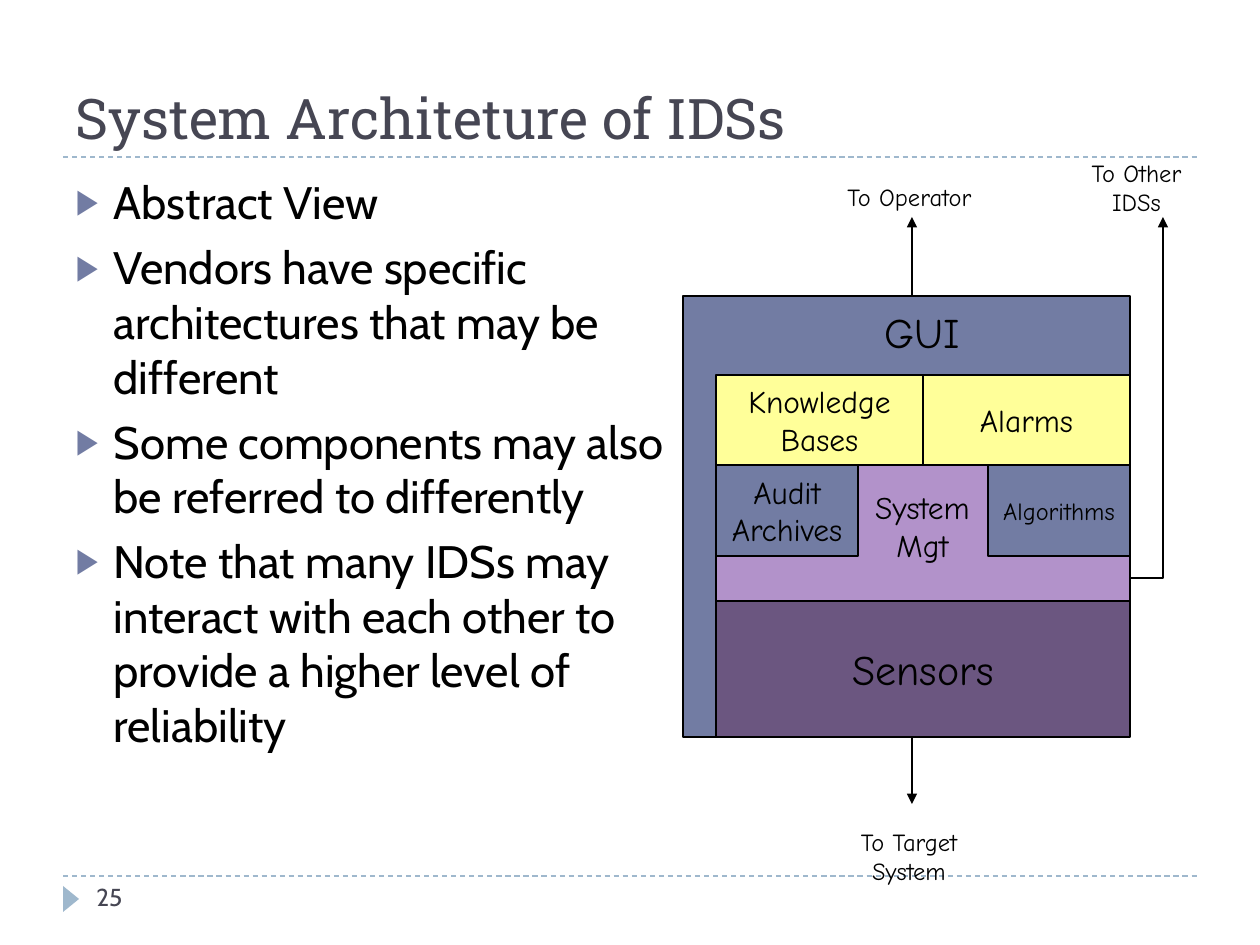
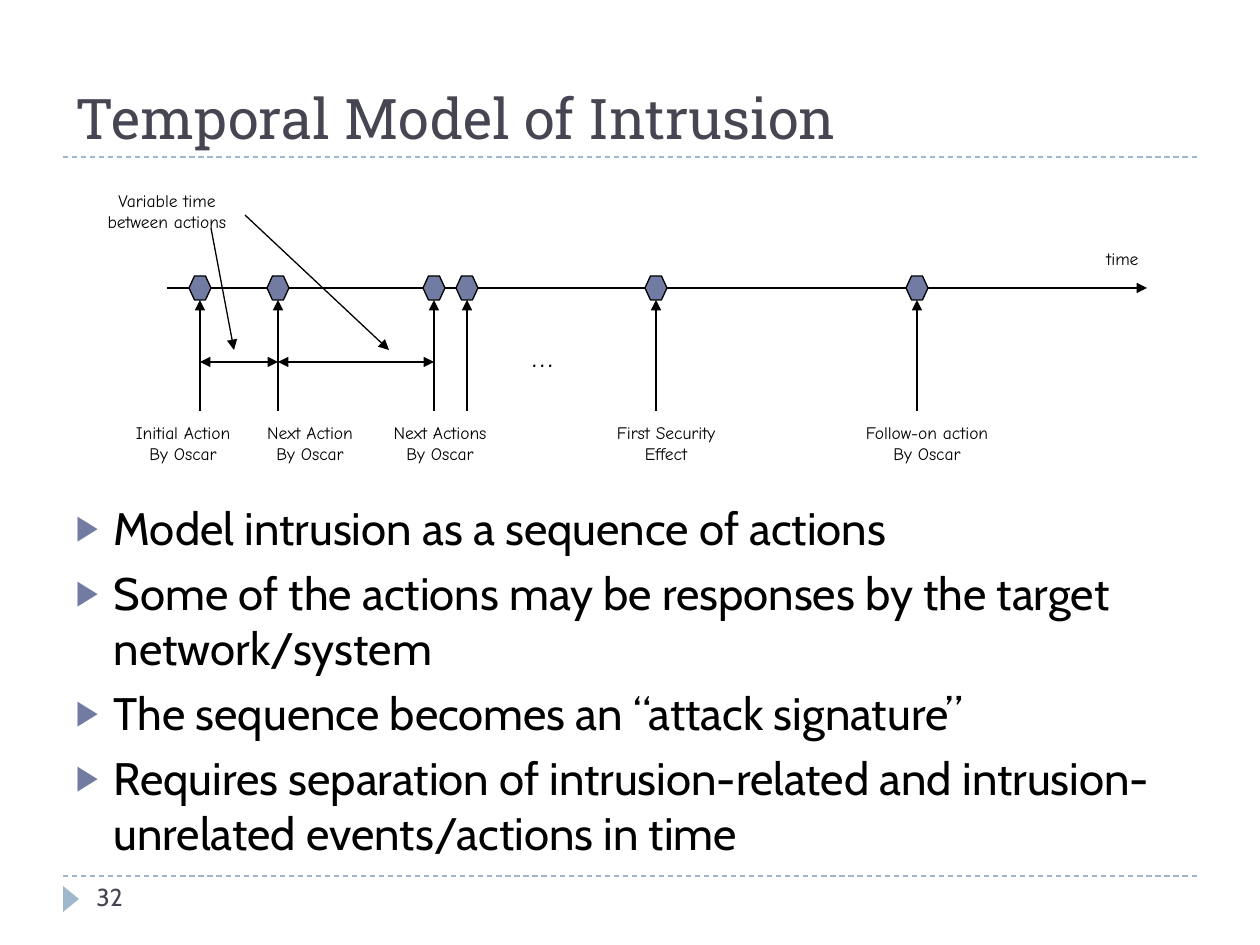
from lxml import etree
from pptx import Presentation
from pptx.dml.color import RGBColor
from pptx.enum.dml import MSO_LINE
from pptx.enum.shapes import MSO_CONNECTOR, MSO_SHAPE
from pptx.enum.text import MSO_ANCHOR, MSO_AUTO_SIZE, PP_ALIGN
from pptx.oxml.ns import qn
from pptx.util import Pt

STRAIGHT = MSO_CONNECTOR.STRAIGHT
RECTANGLE, HEXAGON, TRIANGLE = MSO_SHAPE.RECTANGLE, MSO_SHAPE.HEXAGON, MSO_SHAPE.ISOSCELES_TRIANGLE
TOP, MIDDLE, BOTTOM = MSO_ANCHOR.TOP, MSO_ANCHOR.MIDDLE, MSO_ANCHOR.BOTTOM
LEFT, CENTER = PP_ALIGN.LEFT, PP_ALIGN.CENTER
DASH = MSO_LINE.DASH
NO_FIT = MSO_AUTO_SIZE.NONE

EMU_PER_PX = 914400 / 126
SLIDE_SIZE = (1260, 945)
TITLE_BOX = (63, 21, 1134, 136)
NUMBER_BOX = (84, 876, 273, 50)
MARKER_BOX = (58, 891, 26, 16)
RULE_ENDS, RULE_YS = (63, 1197), (157, 876)
BULLET_INDENT = 38

TITLE_FONT, BODY_FONT, DIAGRAM_FONT = "Roboto Slab", "Cabin", "Comic Neue"
BLACK, SLATE, PALE_BLUE = "000000", "464653", "9FB8CD"
BLUE, YELLOW, LILAC, PLUM = "727CA3", "FFFF99", "B292CA", "6B5680"

ARCHITECTURE = {
    "title": "System Architeture of IDSs",
    "number": "25",
    "body_box": (63, 168, 620, 680),
    "points": [
        "Abstract View",
        "Vendors have specific architectures that may be different",
        "Some components may also be referred to differently",
        "Note that many IDSs may interact with each other to provide a higher level of reliability",
    ],
}
TEMPORAL = {
    "title": "Temporal Model of Intrusion",
    "number": "32",
    "body_box": (63, 494, 1134, 355),
    "points": [
        "Model intrusion as a sequence of actions",
        "Some of the actions may be responses by the target network/system",
        "The sequence becomes an “attack signature”",
        "Requires separation of intrusion-related and intrusion-unrelated events/actions in time",
    ],
}

# Edges of the component stack
FRAME_LEFT, STACK_LEFT, STACK_RIGHT = 683, 716, 1130
STACK_MID = (STACK_LEFT + STACK_RIGHT) // 2
SIDE_WIDTH = 142
MGT_LEFT, MGT_RIGHT = STACK_LEFT + SIDE_WIDTH, STACK_RIGHT - SIDE_WIDTH
GUI_TOP, KNOWLEDGE_TOP, AUDIT_TOP, MGT_BASE_TOP, SENSORS_TOP, STACK_BOTTOM = 296, 375, 465, 556, 601, 737
OPERATOR_X, OTHER_IDS_X, ARROW_TOP = 912, 1163, 217

# lines, size, fill, left, top, right, bottom
COMPONENTS = [
    (["Knowledge", "Bases"], 18, YELLOW, STACK_LEFT, KNOWLEDGE_TOP, STACK_MID, AUDIT_TOP),
    (["Alarms"], 18, YELLOW, STACK_MID, KNOWLEDGE_TOP, STACK_RIGHT, AUDIT_TOP),
    (["Audit", "Archives"], 18, BLUE, STACK_LEFT, AUDIT_TOP, MGT_LEFT, MGT_BASE_TOP),
    (["Algorithms"], 14, BLUE, MGT_RIGHT, AUDIT_TOP, STACK_RIGHT, MGT_BASE_TOP),
    (["Sensors"], 24, PLUM, STACK_LEFT, SENSORS_TOP, STACK_RIGHT, STACK_BOTTOM),
]
MANAGEMENT_OUTLINE = [
    (STACK_LEFT, SENSORS_TOP), (STACK_RIGHT, SENSORS_TOP), (STACK_RIGHT, MGT_BASE_TOP),
    (MGT_RIGHT, MGT_BASE_TOP), (MGT_RIGHT, AUDIT_TOP), (MGT_LEFT, AUDIT_TOP),
    (MGT_LEFT, MGT_BASE_TOP), (STACK_LEFT, MGT_BASE_TOP),
]
GUI_OUTLINE = [
    (FRAME_LEFT, STACK_BOTTOM), (FRAME_LEFT, GUI_TOP), (STACK_RIGHT, GUI_TOP),
    (STACK_RIGHT, KNOWLEDGE_TOP), (STACK_LEFT, KNOWLEDGE_TOP), (STACK_LEFT, STACK_BOTTOM),
]
OTHER_IDS_ROUTE = [(STACK_RIGHT, 578), (OTHER_IDS_X, 578), (OTHER_IDS_X, ARROW_TOP)]
ARCHITECTURE_LABELS = [
    (["System", "Mgt"], 18, (852, 479, 141, 94)),
    (["GUI"], 24, (866, 296, 112, 72)),
    (["To Operator"], 14, (822, 174, 175, 45)),
    (["To Other", "IDSs"], 14, (1070, 151, 133, 72)),
    (["To Target", "System"], 14, (836, 818, 146, 77)),
]

# Timeline
AXIS_Y, AXIS_START, AXIS_END = 288, 167, 1147
MARK_WIDTH, MARK_HEIGHT = 22, 24
POINTER_BOTTOM, INTERVAL_Y = 411, 362
EVENT_XS = [200, 278, 434, 467, 656, 917]
INTERVALS = list(zip(EVENT_XS[:2], EVENT_XS[1:3]))
CALLOUT_ARROWS = [((211, 228), (234, 350)), ((245, 215), (389, 350))]
# lines, centre, width
EVENT_LABELS = [
    (["Initial Action", "By Oscar"], 183, 142),
    (["Next Action", "By Oscar"], 310, 134),
    (["Next Actions", "By Oscar"], 440, 142),
    (["First Security", "Effect"], 666, 150),
    (["Follow-on action", "By Oscar"], 927, 166),
]
TIMELINE_LABELS = [
    (["Variable time", "between actions"], 10, (84, 179, 166, 64)),
    (["…"], 18, (518, 325, 49, 59)),
    (["time"], 10, (1090, 239, 65, 39)),
] + [(lines, 10, (center - width // 2, POINTER_BOTTOM, width, 64))
     for lines, center, width in EVENT_LABELS]


def px(*lengths):
    return [round(length * EMU_PER_PX) for length in lengths]


def color(hex_string):
    return RGBColor.from_string(hex_string)


def write(frame, lines, size, font, text_color=BLACK, align=CENTER, anchor=MIDDLE, wrap=False):
    frame.word_wrap = wrap
    frame.auto_size = NO_FIT
    frame.vertical_anchor = anchor
    for index, line in enumerate(lines):
        paragraph = frame.add_paragraph() if index else frame.paragraphs[0]
        paragraph.alignment = align
        run = paragraph.add_run()
        run.text = line
        run.font.size = Pt(size)
        run.font.name = font
        run.font.color.rgb = color(text_color)


def add_label(slide, lines, size, box):
    write(slide.shapes.add_textbox(*px(*box)).text_frame, lines, size, DIAGRAM_FONT)


def style(shape, fill=None, outline=BLACK):
    shape.shadow.inherit = False
    if fill:
        shape.fill.solid()
        shape.fill.fore_color.rgb = color(fill)
    else:
        shape.fill.background()
    if outline:
        shape.line.color.rgb = color(outline)
        shape.line.width = Pt(0.75)
    else:
        shape.line.fill.background()


def add_block(slide, kind, box, fill, outline=BLACK):
    block = slide.shapes.add_shape(kind, *px(*box))
    style(block, fill, outline)
    return block


def add_outline(slide, points, fill=None):
    """Draw a closed filled outline, or an open route when there is no fill."""
    builder = slide.shapes.build_freeform(*points[0], scale=EMU_PER_PX)
    builder.add_line_segments(points[1:], close=bool(fill))
    outline = builder.convert_to_shape()
    style(outline, fill)
    return outline


def add_arrowheads(shape, *ends):
    line = shape.line._get_or_add_ln()
    for end in ends:
        etree.SubElement(line, qn(f"a:{end}"), type="triangle")


def add_line(slide, start, end, *heads, line_color=BLACK, dash=None):
    line = slide.shapes.add_connector(STRAIGHT, *px(*start, *end))
    line.line.color.rgb = color(line_color)
    line.line.width = Pt(0.75)
    if dash:
        line.line.dash_style = dash
    add_arrowheads(line, *heads)
    etree.SubElement(line._element.spPr, qn("a:effectLst"))


def add_bullet(paragraph):
    paragraph.space_before = Pt(6)
    paragraph.line_spacing = 1.0
    properties = paragraph._p.get_or_add_pPr()
    indent, = px(BULLET_INDENT)
    properties.set("marL", str(indent))
    properties.set("indent", str(-indent))
    bullet_color = etree.SubElement(properties, qn("a:buClr"))
    etree.SubElement(bullet_color, qn("a:srgbClr"), val=BLUE)
    etree.SubElement(properties, qn("a:buSzPct"), val="76000")
    etree.SubElement(properties, qn("a:buFont"), typeface=BODY_FONT)
    etree.SubElement(properties, qn("a:buChar"), char="▶")


def place(shape, box):
    shape.left, shape.top, shape.width, shape.height = px(*box)


def add_content_slide(deck, content):
    """Add a slide with the shared rules, marker, number, title and bullet list."""
    slide = deck.slides.add_slide(deck.slide_layouts[1])
    for y in RULE_YS:
        add_line(slide, (RULE_ENDS[0], y), (RULE_ENDS[1], y), line_color=PALE_BLUE, dash=DASH)
    add_block(slide, TRIANGLE, MARKER_BOX, PALE_BLUE, outline=None).rotation = 90
    number = slide.shapes.add_textbox(*px(*NUMBER_BOX))
    write(number.text_frame, [content["number"]], 14, BODY_FONT, SLATE, LEFT, TOP, wrap=True)

    title, body = slide.placeholders
    place(title, TITLE_BOX)
    write(title.text_frame, [content["title"]], 32, TITLE_FONT, SLATE, LEFT, BOTTOM, wrap=True)
    place(body, content["body_box"])
    write(body.text_frame, content["points"], 26, BODY_FONT, BLACK, LEFT, TOP, wrap=True)
    for paragraph in body.text_frame.paragraphs:
        add_bullet(paragraph)
    return slide


def draw_architecture(slide):
    for lines, size, fill, left, top, right, bottom in COMPONENTS:
        block = add_block(slide, RECTANGLE, (left, top, right - left, bottom - top), fill)
        write(block.text_frame, lines, size, DIAGRAM_FONT)
    add_outline(slide, MANAGEMENT_OUTLINE, LILAC)
    add_outline(slide, GUI_OUTLINE, BLUE)
    add_line(slide, (OPERATOR_X, GUI_TOP), (OPERATOR_X, ARROW_TOP), "tailEnd")
    add_line(slide, (OPERATOR_X, STACK_BOTTOM), (OPERATOR_X, 804), "tailEnd")
    add_arrowheads(add_outline(slide, OTHER_IDS_ROUTE), "tailEnd")
    for label in ARCHITECTURE_LABELS:
        add_label(slide, *label)


def draw_timeline(slide):
    add_line(slide, (AXIS_START, AXIS_Y), (AXIS_END, AXIS_Y), "tailEnd")
    mark_top = AXIS_Y - MARK_HEIGHT // 2
    for x in EVENT_XS:
        add_block(slide, HEXAGON, (x - MARK_WIDTH // 2, mark_top, MARK_WIDTH, MARK_HEIGHT), BLUE)
        add_line(slide, (x, POINTER_BOTTOM), (x, mark_top + MARK_HEIGHT), "tailEnd")
    for start, end in INTERVALS:
        add_line(slide, (start, INTERVAL_Y), (end, INTERVAL_Y), "headEnd", "tailEnd")
    for start, end in CALLOUT_ARROWS:
        add_line(slide, start, end, "tailEnd")
    for label in TIMELINE_LABELS:
        add_label(slide, *label)


def main():
    deck = Presentation()
    deck.slide_width, deck.slide_height = px(*SLIDE_SIZE)
    draw_architecture(add_content_slide(deck, ARCHITECTURE))
    draw_timeline(add_content_slide(deck, TEMPORAL))
    deck.save("out.pptx")


if __name__ == "__main__":
    main()
